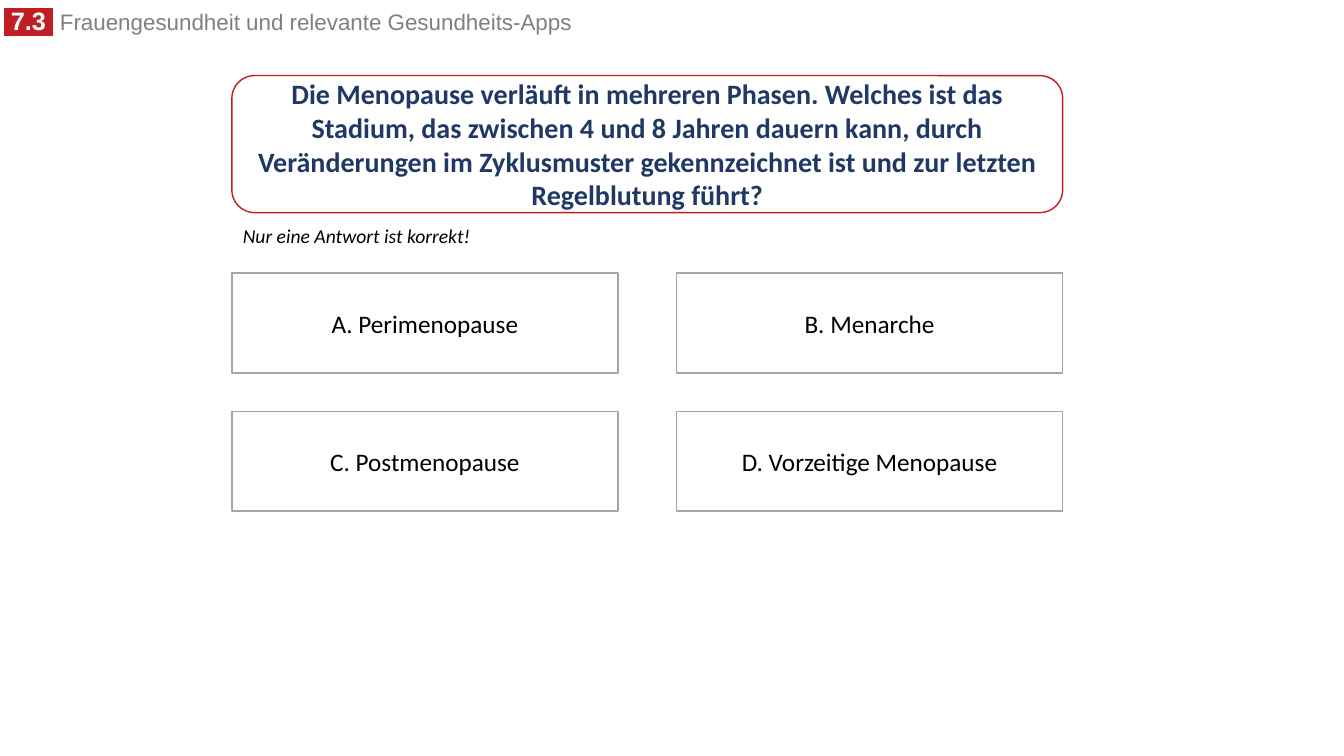
from dataclasses import dataclass

import pptx
import pptx.util
import pptx.dml.color
import pptx.enum.shapes
import pptx.enum.text
import pptx.oxml.ns
from lxml import etree
from pptx.util import Inches

SHAPE = pptx.enum.shapes.MSO_SHAPE
ALIGN = pptx.enum.text.PP_ALIGN
ANCHOR = pptx.enum.text.MSO_ANCHOR
AUTO_SIZE = pptx.enum.text.MSO_AUTO_SIZE


@dataclass(frozen=True)
class Theme:
    red: str = "C01E24"
    navy: str = "203864"
    grey: str = "808080"
    border: str = "A5A5A5"
    black: str = "000000"
    white: str = "FFFFFF"
    header_font: str = "Arial"
    body_font: str = "Calibri"
    question_size: int = 20
    answer_size: int = 18
    number_size: int = 18
    title_size: int = 16
    hint_size: int = 14


T = Theme()


def rgb(value):
    return pptx.dml.color.RGBColor.from_string(value)


def add_text(p, text, size=T.answer_size, color=T.black, font=T.body_font,
             bold=False, italic=False, highlight=None):
    r = p.add_run()
    r.text = text
    r.font.size = pptx.util.Pt(size)
    r.font.name = font
    r.font.bold = bold
    r.font.italic = italic
    r.font.color.rgb = rgb(color)
    if highlight:
        # The highlight element must follow the text fill
        qn = pptx.oxml.ns.qn
        mark = etree.Element(qn("a:highlight"))
        etree.SubElement(mark, qn("a:srgbClr")).set("val", highlight)
        r.font.fill  # text fill is already solid
        r._r.rPr.find(qn("a:solidFill")).addnext(mark)


def add_label(s, x, y, w, h, wrap=True):
    tf = s.shapes.add_textbox(Inches(x), Inches(y), Inches(w), Inches(h)).text_frame
    tf.word_wrap = wrap
    tf.auto_size = AUTO_SIZE.SHAPE_TO_FIT_TEXT
    return tf.paragraphs[0]


def add_box(s, kind, x, y, w, h, text, line, **fmt):
    sp = s.shapes.add_shape(kind, Inches(x), Inches(y), Inches(w), Inches(h))
    sp.shadow.inherit = False
    sp.fill.solid()
    sp.fill.fore_color.rgb = rgb(T.white)
    sp.line.color.rgb = rgb(line)
    sp.line.width = pptx.util.Pt(1)
    tf = sp.text_frame
    tf.word_wrap = True
    tf.vertical_anchor = ANCHOR.MIDDLE
    p = tf.paragraphs[0]
    p.alignment = ALIGN.CENTER
    add_text(p, text, **fmt)


def add_header(s, number, title):
    p = add_label(s, -0.06, 0.06, 6.86, 0.35)
    p.line_spacing = 0.8
    add_text(p, f" {number} ", size=T.number_size, color=T.white,
             font=T.header_font, bold=True, highlight=T.red)
    add_text(p, " ", size=T.number_size, color=T.grey, font=T.header_font)
    add_text(p, title, size=T.title_size, color=T.grey, font=T.header_font)


def add_answers(s, answers, left=2.3, top=2.71, w=3.83, h=0.99,
                col_step=4.41, row_step=1.37):
    for i, (letter, answer) in enumerate(zip("ABCD", answers)):
        row, col = divmod(i, 2)
        add_box(s, SHAPE.RECTANGLE, left + col * col_step, top + row * row_step,
                w, h, f"{letter}. {answer}", T.border)


def main():
    prs = pptx.Presentation()
    prs.slide_width, prs.slide_height = Inches(13.33), Inches(7.5)
    s = prs.slides.add_slide(prs.slide_layouts[6])

    # Section header
    add_header(s, "7.3", "Frauengesundheit und relevante Gesundheits-Apps")

    # Question
    add_box(s, SHAPE.ROUNDED_RECTANGLE, 2.3, 0.75, 8.24, 1.36,
            "Die Menopause verläuft in mehreren Phasen. Welches ist das Stadium, "
            "das zwischen 4 und 8 Jahren dauern kann, durch Veränderungen im "
            "Zyklusmuster gekennzeichnet ist und zur letzten Regelblutung führt?",
            T.red, size=T.question_size, color=T.navy, bold=True)

    # Hint
    add_text(add_label(s, 2.31, 2.17, 2.47, 0.34, wrap=False),
             "Nur eine Antwort ist korrekt!", size=T.hint_size, italic=True)

    # Answer grid
    add_answers(s, ["Perimenopause", "Menarche", "Postmenopause",
                    "Vorzeitige Menopause"])

    prs.save("out.pptx")


if __name__ == "__main__":
    main()
